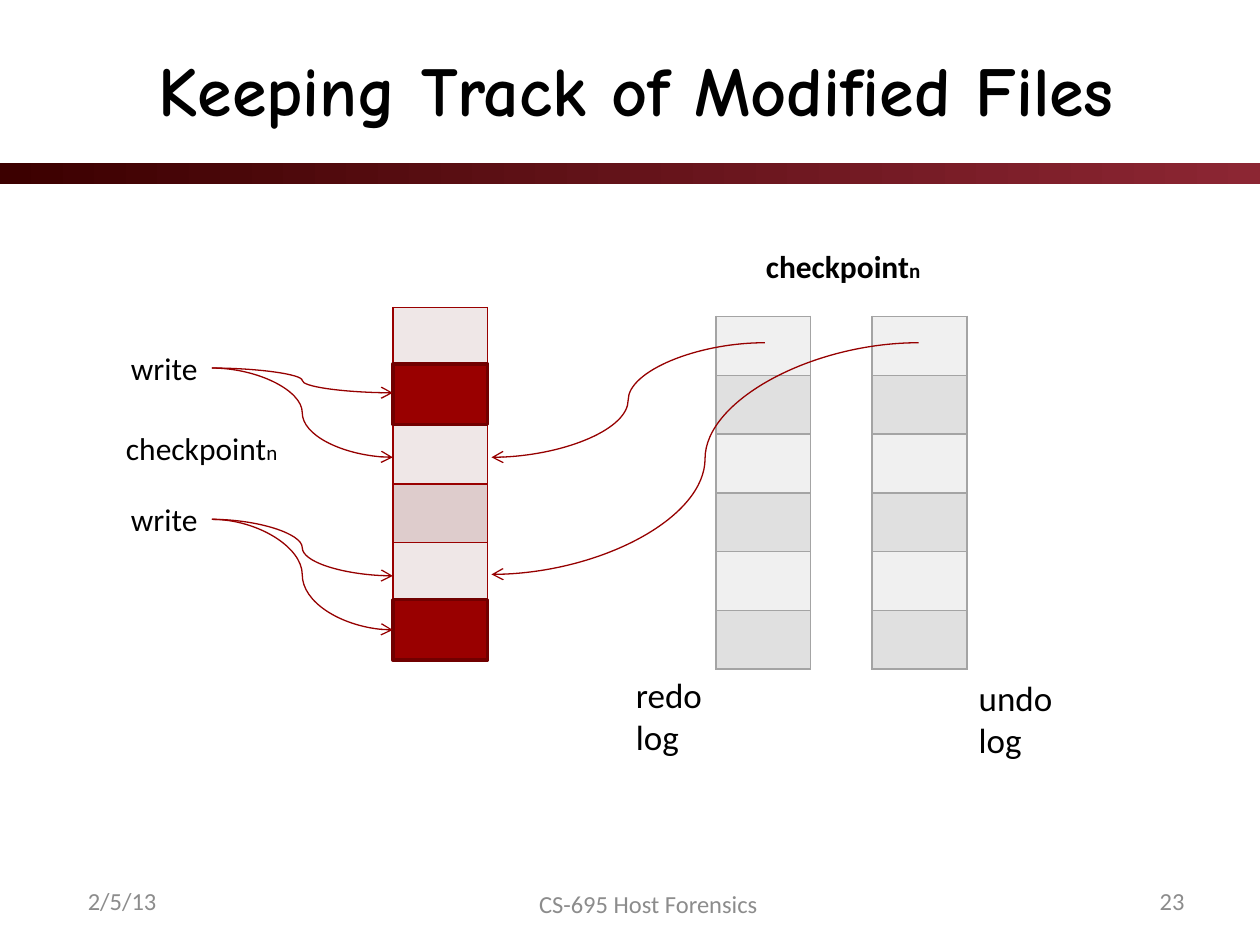
"""Builds the slide on keeping track of modified files."""
import pptx
import pptx.util
import pptx.dml.color
import pptx.enum.shapes
import pptx.enum.text
import pptx.oxml
import pptx.oxml.ns

Cm = pptx.util.Cm
Pt = pptx.util.Pt
ALIGN = pptx.enum.text.PP_ALIGN
MID = pptx.enum.text.MSO_ANCHOR.MIDDLE


def color(text):
    return pptx.dml.color.RGBColor.from_string(text)


def node(text):
    return pptx.oxml.parse_xml(text.replace(">", f" {pptx.oxml.ns.nsdecls('a')}>", 1))


class Deck:
    font = "Calibri"
    black = "000000"
    gray = "8C8C8C"
    red = "960000"

    def __init__(self):
        self.file = pptx.Presentation()
        self.file.slide_width, self.file.slide_height = Cm(25.4), Cm(19.05)
        self.page = self.file.slides.add_slide(self.file.slide_layouts[5])
        self.shapes = self.page.shapes

    def run(self, para, text, size, hue=black, bold=False, font=font):
        run = para.add_run()
        run.text = text
        run.font.size, run.font.name, run.font.bold = Pt(size), font, bold
        run.font.color.rgb = color(hue)

    def title(self, text):
        box = self.shapes.title
        box.left, box.top, box.width, box.height = Cm(1.52), Cm(0.38), Cm(22.61), Cm(2.79)
        box.text_frame.vertical_anchor = MID
        para = box.text_frame.paragraphs[0]
        para.alignment = ALIGN.CENTER
        self.run(para, text, 40, bold=True, font="Comic Neue")

    def box(self, left, top, width, height=1.02):
        frame = self.shapes.add_textbox(Cm(left), Cm(top), Cm(width), Cm(height)).text_frame
        frame.word_wrap = False
        return frame

    def label(self, left, top, width, height, lines, bold=False):
        frame = self.box(left, top, width, height)
        for i, line in enumerate(lines):
            para = frame.add_paragraph() if i else frame.paragraphs[0]
            for text, size in line:
                self.run(para, text, size, bold=bold)

    def footer(self, left, top, width, text, align):
        frame = self.box(left, top, width)
        frame.word_wrap = True
        frame.vertical_anchor = MID
        frame.paragraphs[0].alignment = align
        self.run(frame.paragraphs[0], text, 14, self.gray)

    def rect(self, left, top, width, height):
        shape = self.shapes.add_shape(
            pptx.enum.shapes.MSO_SHAPE.RECTANGLE, Cm(left), Cm(top), Cm(width), Cm(height))
        shape.shadow.inherit = False
        return shape

    def band(self, top, height, start, end):
        shape = self.rect(0, top, 25.4, height)
        shape.fill.gradient()
        shape.fill.gradient_angle = 0
        for stop, hue in zip(shape.fill.gradient_stops, (start, end)):
            stop.color.rgb = color(hue)
        shape.line.fill.background()

    def block(self, left, top):
        shape = self.rect(left, top, 1.91, 1.22)
        shape.fill.solid()
        shape.fill.fore_color.rgb = color("990000")
        shape.line.color.rgb = color("710000")
        shape.line.width = Pt(2)

    def stack(self, left, top, fills, edge, count=6):
        table = self.shapes.add_table(
            count, 1, Cm(left), Cm(top), Cm(1.91), Cm(7.11)).table
        table.first_row = table.horz_banding = False
        for i in range(count):
            cell = table.cell(i, 0)
            props = cell._tc.get_or_add_tcPr()
            for side in "LRTB":
                props.append(node(
                    f'<a:ln{side} w="12700"><a:solidFill><a:srgbClr val="{edge}"/>'
                    f"</a:solidFill></a:ln{side}>"))
            cell.fill.solid()
            cell.fill.fore_color.rgb = color(fills[i % 2])

    def arrow(self, start, end):
        line = self.shapes.add_connector(
            pptx.enum.shapes.MSO_CONNECTOR.CURVE, *map(Cm, start + end))
        line.line.color.rgb = color(self.red)
        line.line.width = Pt(0.75)
        line.line._get_or_add_ln().append(node('<a:tailEnd type="arrow"></a:tailEnd>'))
        line._element.spPr.append(node("<a:effectLst></a:effectLst>"))


def main():
    deck = Deck()
    deck.band(3.28, 0.43, "3C0000", "8C2633")
    deck.title("Keeping Track of Modified Files")

    for left in (17.58, 14.43):
        deck.stack(left, 6.38, ("F0F0F0", "E0E0E0"), "A4A4A4")
    deck.stack(7.92, 6.2, ("EFE7E7", "DECCCC"), "990000")
    for top in (7.34, 12.09):
        deck.block(7.92, top)

    for top, ends in ((6.91, (7.92, 9.22)), (9.96, (11.61, 12.7))):
        deck.label(2.39, top, 1.88, 1.02, [[("write", 18)]])
        for end in ends:
            deck.arrow((4.27, top + 0.51), (7.92, end))
    for left, end in ((15.42, 9.22), (18.52, 11.58)):
        deck.arrow((left, 6.91), (9.91, end))

    mark = [[("checkpoint", 18), ("n", 12)]]
    deck.label(2.29, 8.53, 3.61, 1.02, mark)
    deck.label(15.19, 4.85, 3.66, 1.02, mark, bold=True)
    for left, top, width, word in ((12.57, 13.46, 1.85, "redo"), (19.48, 13.51, 2.08, "undo")):
        deck.label(left, top, width, 1.96, [[(word, 20)], [("log", 20)]])

    deck.footer(1.52, 17.65, 4.65, "2/5/13", ALIGN.LEFT)
    deck.footer(9.91, 17.7, 6.32, "CS-695 Host Forensics", ALIGN.CENTER)
    deck.footer(19.48, 17.65, 4.65, "23", ALIGN.RIGHT)
    deck.file.save("out.pptx")


if __name__ == "__main__":
    main()
